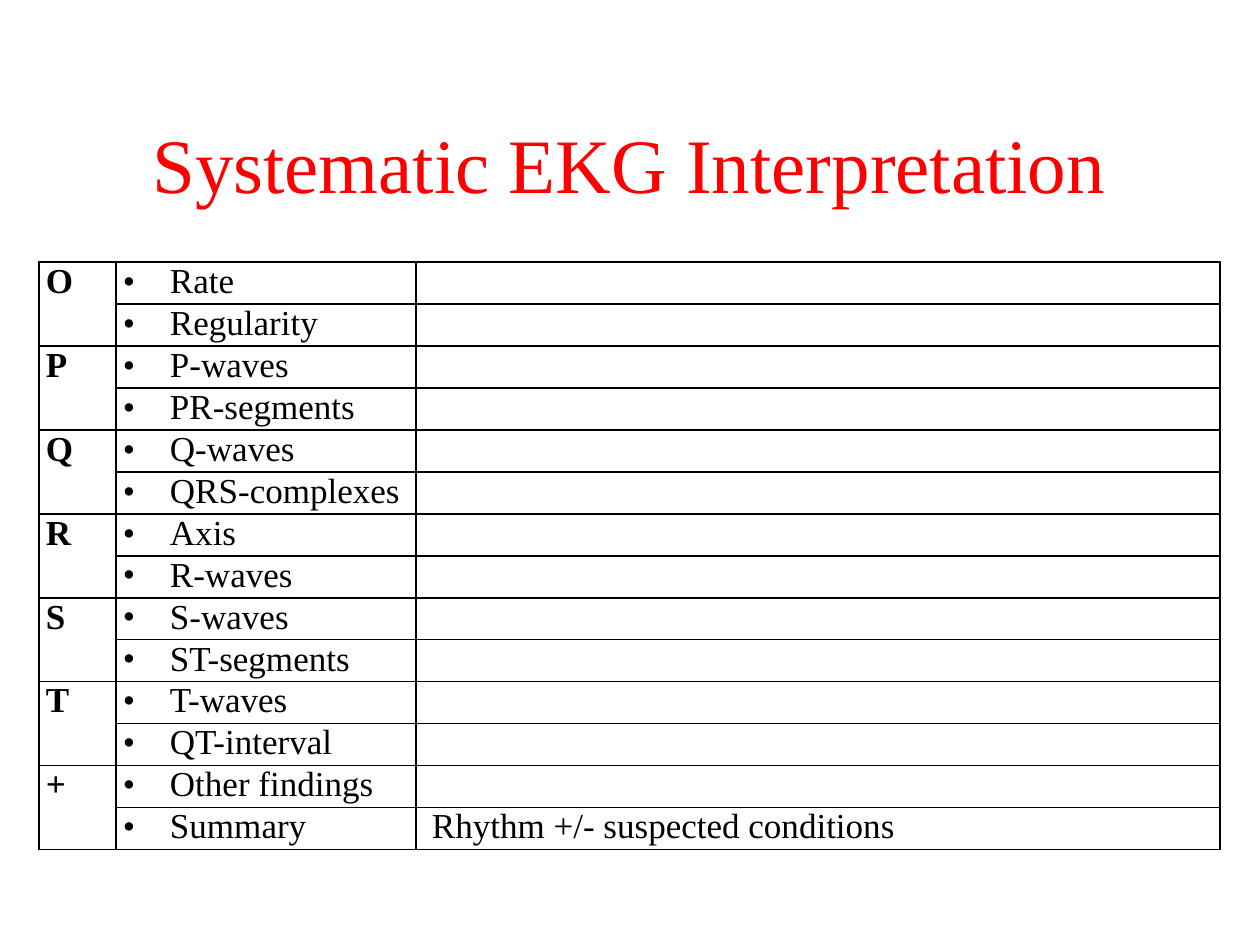
import lxml.etree
import pptx
import pptx.dml.color
import pptx.enum.text
import pptx.oxml.ns
import pptx.util

PX = 914400 / 126
COLORS = {"title": "FF0000", "text": "000000", "line": "000000"}
FONT = "Times New Roman"
qn = pptx.oxml.ns.qn


def px(n):
    return pptx.util.Emu(round(n * PX))


def write(p, text, size, color, bold=False):
    r = p.add_run()
    r.text = text
    values = {"name": FONT, "size": pptx.util.Pt(size), "bold": bold}
    for name, value in values.items():
        setattr(r.font, name, value)
    r.font.color.rgb = pptx.dml.color.RGBColor.from_string(COLORS[color])


prs = pptx.Presentation()
prs.slide_width, prs.slide_height = px(1260), px(945)
s = prs.slides.add_slide(prs.slide_layouts[5])

# Title
title = s.shapes.title
title.left, title.top, title.width, title.height = px(94), px(84), px(1071), px(158)
tf = title.text_frame
tf.vertical_anchor = pptx.enum.text.MSO_ANCHOR.MIDDLE
p = tf.paragraphs[0]
p.alignment = pptx.enum.text.PP_ALIGN.CENTER
write(p, "Systematic EKG Interpretation", 44, "title")

# Each letter covers two checklist items
groups = [
    ("O", ["Rate", "Regularity"]),
    ("P", ["P-waves", "PR-segments"]),
    ("Q", ["Q-waves", "QRS-complexes"]),
    ("R", ["Axis", "R-waves"]),
    ("S", ["S-waves", "ST-segments"]),
    ("T", ["T-waves", "QT-interval"]),
    ("+", ["Other findings", "Summary"]),
]
widths = [77, 300, 804]
row_height = 42
rows = 2 * len(groups)
table = s.shapes.add_table(rows, len(widths), px(39), px(262),
                           px(sum(widths)), px(rows * row_height)).table
table.first_row = table.horz_banding = False
for column, width in zip(table.columns, widths):
    column.width = px(width)
for row in table.rows:
    row.height = px(row_height)

# Cell margins, borders and no fill
for cell in table.iter_cells():
    margins = {"margin_left": 7, "margin_right": 7, "margin_top": 0, "margin_bottom": 0}
    for name, value in margins.items():
        setattr(cell, name, px(value))
    tcPr = cell._tc.get_or_add_tcPr()
    for side in ("lnL", "lnR", "lnT", "lnB"):
        ln = lxml.etree.SubElement(tcPr, qn("a:" + side), w=str(pptx.util.Pt(1)))
        fill = lxml.etree.SubElement(ln, qn("a:solidFill"))
        lxml.etree.SubElement(fill, qn("a:srgbClr"), val=COLORS["line"])
    cell.fill.background()

# Letters and bulleted items
for g, (letter, items) in enumerate(groups):
    top = 2 * g
    table.cell(top, 0).merge(table.cell(top + 1, 0))
    write(table.cell(top, 0).text_frame.paragraphs[0], letter, 20, "text", True)
    for i, item in enumerate(items):
        p = table.cell(top + i, 1).text_frame.paragraphs[0]
        pPr = p._p.get_or_add_pPr()
        pPr.set("marL", str(px(47)))
        pPr.set("indent", str(px(-47)))
        color = lxml.etree.SubElement(pPr, qn("a:buClr"))
        lxml.etree.SubElement(color, qn("a:srgbClr"), val=COLORS["text"])
        lxml.etree.SubElement(pPr, qn("a:buFont"), typeface=FONT)
        lxml.etree.SubElement(pPr, qn("a:buChar"), char="•")
        write(p, item, 20, "text")

# Summary finding
summary = table.cell(rows - 1, 2)
summary.margin_left = px(16)
write(summary.text_frame.paragraphs[0], "Rhythm +/- suspected conditions", 20, "text")

prs.save("out.pptx")
